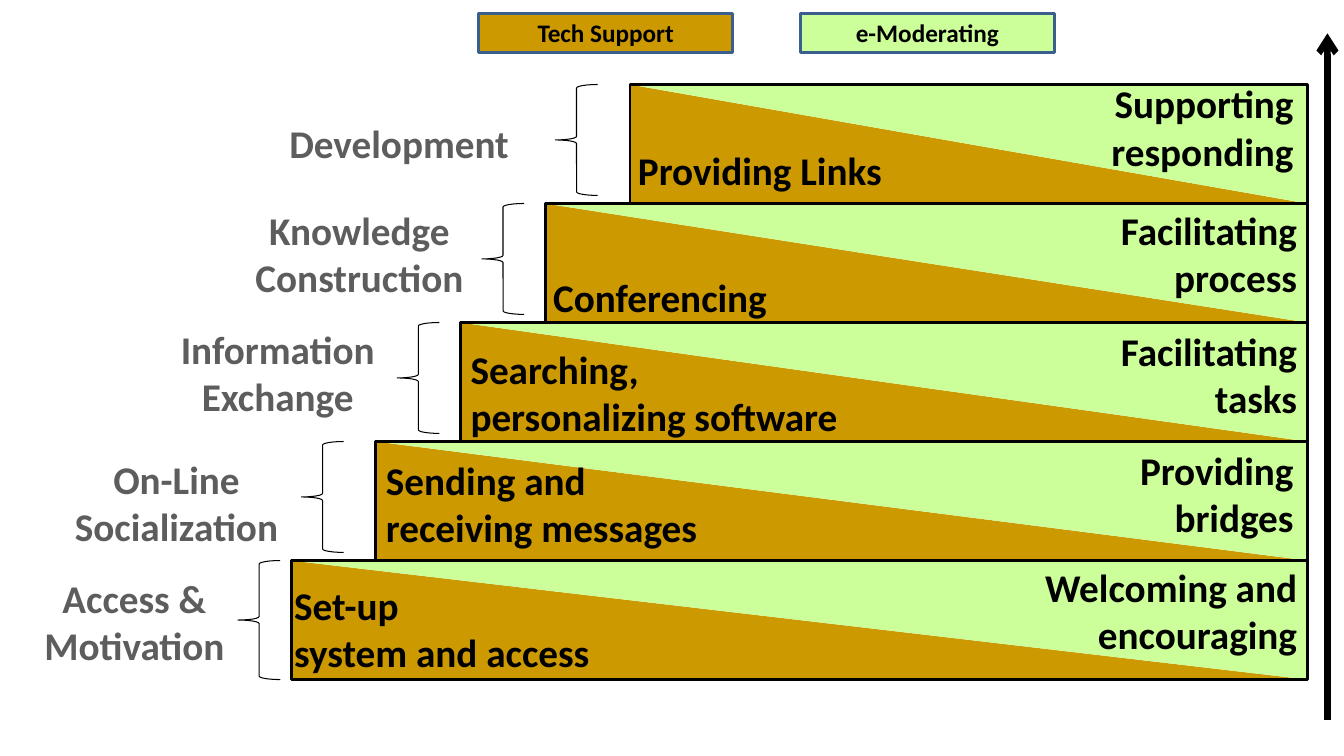
from collections import namedtuple

from lxml.etree import SubElement
from pptx import Presentation
from pptx.dml.color import RGBColor
from pptx.enum.shapes import MSO_CONNECTOR, MSO_SHAPE
from pptx.enum.text import MSO_ANCHOR, PP_ALIGN
from pptx.oxml.ns import qn
from pptx.util import Pt

Label = namedtuple("Label", "lines x dy width")  # dy is measured from the step's top
Step = namedtuple("Step", "stage support moderating brace_x brace_height")

# Top step first. x is the centre of a stage, the left of a support task
# and the right of a moderating task.
STEPS = [
    Step(Label(["Development"], 285, 21, 176),
         Label(["Providing Links"], 448.6, 6, 195),
         Label(["Supporting", "responding"], 931, -7, 150), 396.7, 79.2),
    Step(Label(["Knowledge", "Construction"], 256.7, -1.4, 168),
         Label(["Conferencing"], 388, 11.5, 173),
         Label(["Facilitating", "process"], 933.5, -1.4, 146), 344.2, 79.2),
    Step(Label(["Information", "Exchange"], 198.4, -1.4, 158),
         Label(["Searching,", "personalizing software"], 329, 11.5, 284),
         Label(["Facilitating", "tasks"], 933.5, 0, 146), 283.7, 79.2),
    Step(Label(["On-Line", "Socialization"], 126, 6, 165),
         Label(["Sending and", "receiving messages"], 268.6, 6, 243),
         Label(["Providing", "bridges"], 931, 0, 129), 215.3, 79.2),
    Step(Label(["Access &", "Motivation"], 96, 6, 148),
         Label(["Set-up", "system and access"], 203, 10, 231),
         Label(["Welcoming and", "encouraging"], 933.5, -1.4, 200), 170, 85),
]
LEGEND = [("Tech Support", "support", 342), ("e-Moderating", "moderating", 571.7)]

THEME = {
    "font": "Calibri", "label_size": 28, "legend_size": 18,
    "support": RGBColor(0xCC, 0x99, 0x00),
    "moderating": RGBColor(0xCC, 0xFF, 0x99),
    "ink": RGBColor(0, 0, 0),
    "stage": RGBColor(0x5D, 0x5D, 0x5D),
    "legend_line": RGBColor(0x3A, 0x5F, 0x8C),
}
STEP_TOP, STEP_HEIGHT, STEP_RIGHT = 60.4, 85, 934
TOP_LEFT, STEP_SHIFT = 450, 60.5
LINE_HEIGHT, TEXT_MARGINS = 34.2, 7.2


def add_shape(slide, kind, box, fill=None, line=None, weight=2):
    sp = slide.shapes.add_shape(kind, *map(Pt, box))
    sp.shadow.inherit = False
    if fill is None:
        sp.fill.background()
    else:
        sp.fill.solid()
        sp.fill.fore_color.rgb = fill
    if line is None:
        sp.line.fill.background()
    else:
        sp.line.color.rgb = line
        sp.line.width = Pt(weight)
    return sp


def write(sp, lines, size, color, align, anchor):
    tf = sp.text_frame
    tf.word_wrap = True
    tf.vertical_anchor = anchor
    for i, text in enumerate(lines):
        p = tf.add_paragraph() if i else tf.paragraphs[0]
        p.text = text
        p.alignment = align
        p.font.name = THEME["font"]
        p.font.size = Pt(size)
        p.font.bold = True
        p.font.color.rgb = color


def add_label(slide, label, step_top, align, color, rows):
    """Place a label by its left, centre or right, according to align."""
    shift = {PP_ALIGN.LEFT: 0, PP_ALIGN.CENTER: 0.5, PP_ALIGN.RIGHT: 1}[align]
    box = (label.x - shift * label.width, step_top + label.dy,
           label.width, rows * LINE_HEIGHT + TEXT_MARGINS)
    sp = slide.shapes.add_textbox(*map(Pt, box))
    anchor = MSO_ANCHOR.BOTTOM if align == PP_ALIGN.LEFT else MSO_ANCHOR.TOP
    write(sp, label.lines, THEME["label_size"], color, align, anchor)


def add_step(slide, index, step):
    top = STEP_TOP + index * STEP_HEIGHT
    left = TOP_LEFT - index * STEP_SHIFT
    box = (left, top, STEP_RIGHT - left, STEP_HEIGHT)
    ink = THEME["ink"]
    add_shape(slide, MSO_SHAPE.RIGHT_TRIANGLE, box, THEME["support"])
    add_shape(slide, MSO_SHAPE.RIGHT_TRIANGLE, box, THEME["moderating"]).rotation = 180
    add_shape(slide, MSO_SHAPE.RECTANGLE, box, line=ink)
    add_shape(slide, MSO_SHAPE.LEFT_BRACE, (step.brace_x, top, 30.2, step.brace_height),
              line=ink, weight=0.75)
    add_label(slide, step.stage, top, PP_ALIGN.CENTER, THEME["stage"], len(step.stage.lines))
    add_label(slide, step.support, top, PP_ALIGN.LEFT, ink, 2)
    add_label(slide, step.moderating, top, PP_ALIGN.RIGHT, ink, 2)


def add_arrow(slide, x, bottom, top):
    line = slide.shapes.add_connector(MSO_CONNECTOR.STRAIGHT, Pt(x), Pt(bottom), Pt(x), Pt(top))
    line.line.color.rgb = THEME["ink"]
    line.line.width = Pt(4.5)
    SubElement(line.line._get_or_add_ln(), qn("a:tailEnd"), type="arrow")
    SubElement(line._element.spPr, qn("a:effectLst"))


def main():
    prs = Presentation()
    prs.slide_width, prs.slide_height = Pt(960), Pt(540)
    slide = prs.slides.add_slide(prs.slide_layouts[6])
    for index, step in enumerate(STEPS):
        add_step(slide, index, step)
    for text, role, left in LEGEND:
        sp = add_shape(slide, MSO_SHAPE.RECTANGLE, (left, 9.4, 181.4, 28),
                       THEME[role], THEME["legend_line"])
        write(sp, [text], THEME["legend_size"], THEME["ink"], PP_ALIGN.CENTER, MSO_ANCHOR.MIDDLE)
    add_arrow(slide, 948.2, 514, 23.8)
    prs.save("out.pptx")


if __name__ == "__main__":
    main()
